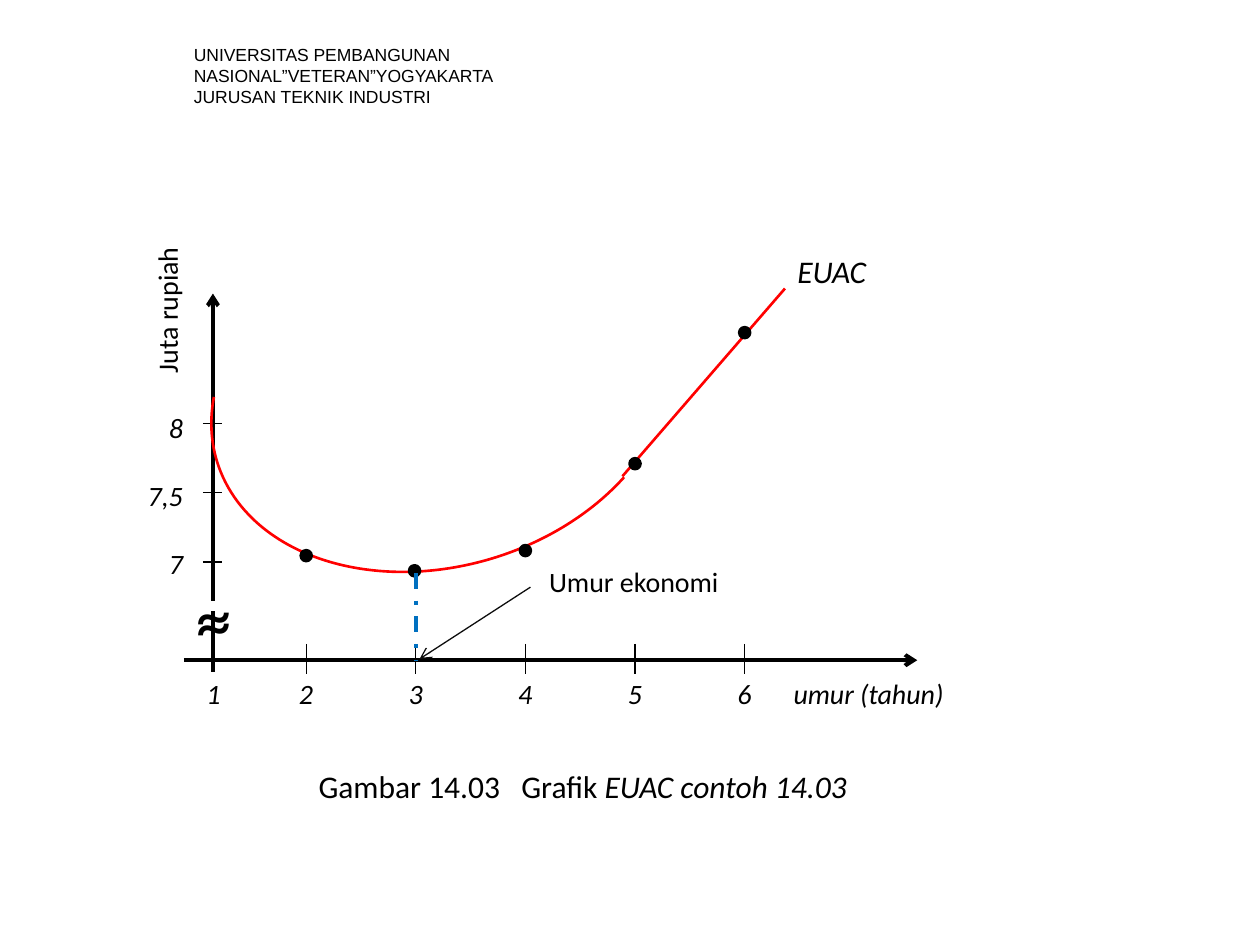
from dataclasses import dataclass

from lxml import etree
from pptx import Presentation
from pptx.dml.color import RGBColor
from pptx.enum.dml import MSO_LINE
from pptx.enum.shapes import MSO_CONNECTOR, MSO_SHAPE
from pptx.enum.text import MSO_AUTO_SIZE, PP_ALIGN
from pptx.oxml.ns import qn
from pptx.util import Inches, Pt

LINE = MSO_CONNECTOR.STRAIGHT
ARC, DOT = MSO_SHAPE.ARC, MSO_SHAPE.FLOWCHART_CONNECTOR
DASH_DOT = MSO_LINE.DASH_DOT
FIT = MSO_AUTO_SIZE.SHAPE_TO_FIT_TEXT
RIGHT = PP_ALIGN.RIGHT
COLS, ROWS = 10, 7.5


@dataclass(frozen=True)
class Theme:
    ink: str = "000000"
    pointer: str = "0D0D0D"
    curve: str = "FF0000"
    marker: str = "0070C0"
    header_font: str = "Arial"
    font: str = "Calibri"
    header: int = 10
    label: int = 16
    caption: int = 18
    symbol: int = 40
    thin: float = 0.75
    medium: float = 1.5
    dot: float = 2
    thick: float = 2.25


class Board:
    """Draws on one slide, in columns and rows of its grid."""

    def __init__(self, prs, theme):
        self.theme = theme
        self.slide = prs.slides.add_slide(prs.slide_layouts[6])
        self.shapes = self.slide.shapes
        self.col, self.row = prs.slide_width / COLS, prs.slide_height / ROWS

    def grid(self, *lengths):
        """Turn alternating column and row lengths into EMU."""
        return [int(v * (self.row if i % 2 else self.col))
                for i, v in enumerate(lengths)]

    def stroke(self, sp, color, width):
        sp.line.color.rgb = RGBColor.from_string(color)
        sp.line.width = Pt(width)

    def line(self, start, end, color, width, arrow=False, dash=None):
        sp = self.shapes.add_connector(LINE, *self.grid(*start, *end))
        self.stroke(sp, color, width)
        if dash:
            sp.line.dash_style = dash
        if arrow:
            etree.SubElement(sp.line._get_or_add_ln(), qn("a:tailEnd"), type="arrow")
        etree.SubElement(sp._element.spPr, qn("a:effectLst"))

    def shape(self, kind, box, color, width, filled=True):
        sp = self.shapes.add_shape(kind, *self.grid(*box))
        sp.shadow.inherit = False
        if filled:
            sp.fill.solid()
            sp.fill.fore_color.rgb = RGBColor.from_string(color)
        else:
            sp.fill.background()
        self.stroke(sp, color, width)
        return sp

    def text(self, box, paragraphs, size, wrap=False, name=None, italic=False,
             align=None, gap=0, tabs=(), vert=None):
        """Each paragraph is a list of (text, italic) runs or a plain string."""
        sp = self.shapes.add_textbox(*self.grid(*box))
        tf = sp.text_frame
        tf.word_wrap, tf.auto_size = wrap, FIT
        if vert:
            tf._txBody.bodyPr.set("vert", vert)
        for i, runs in enumerate(paragraphs):
            p = tf.paragraphs[0] if i == 0 else tf.add_paragraph()
            if align:
                p.alignment = align
            if i and gap:
                p.space_before = Pt(gap)
            if tabs:
                tab_list = etree.SubElement(p._p.get_or_add_pPr(), qn("a:tabLst"))
                for pos, kind in tabs:
                    etree.SubElement(tab_list, qn("a:tab"),
                                     pos=str(int(pos * self.col)), algn=kind)
            for words, slanted in [(runs, italic)] if isinstance(runs, str) else runs:
                r = p.add_run()
                r.text = words
                style = {"name": name or self.theme.font, "size": Pt(size),
                         "italic": slanted}
                for key, value in style.items():
                    setattr(r.font, key, value)
                r.font.color.rgb = RGBColor.from_string(self.theme.ink)


def draw_axes(b):
    t = b.theme
    axis_x, axis_y, inset = 1.69, 5.24, 0.1
    year_x = [2.43 + 0.87 * i for i in range(5)]
    for x in year_x:
        b.line((x, 5.11), (x, 5.35), t.ink, t.thin)
    for i in range(3):
        y = 4.46 - 0.55 * i
        b.line((1.61, y), (1.76, y), t.ink, t.thin)

    b.line((axis_x, 4.77), (axis_x, 2.33), t.ink, t.thick, arrow=True)
    for y in (4.55, 4.46):
        b.text((1.46, y, 0.63, 0.77), ["~"], t.symbol, wrap=True)
    b.line((axis_x, 4.85), (axis_x, 5.33), t.ink, t.thick)
    b.line((1.46, axis_y), (7.28, axis_y), t.ink, t.thick, arrow=True)

    left = 1.54
    tabs = [(x - left - inset, "ctr") for x in year_x] + [(4.66, "l")]
    b.text((left, 5.32, 6.3, 0.37), ["1\t2\t3\t4\t5\t6\tumur (tahun)"], t.label,
           wrap=True, italic=True, tabs=tabs)
    b.text((1.06, 3.21, 0.49, 1.45), ["8", "7,5", "7"], t.label,
           italic=True, align=RIGHT, gap=19.5)
    b.text((1.14, 1.95, 0.47, 1.11), ["Juta rupiah"], t.label, vert="vert270")


def draw_curve(b):
    t = b.theme
    arc = b.shape(ARC, (1.64, 1.74, 3.74, 2.75), t.curve, t.medium, filled=False)
    arc.rotation = 163
    arc.adjustments[0], arc.adjustments[1] = 133.2, 9.53
    b.line((4.94, 3.78), (6.23, 2.29), t.curve, t.medium)
    for x, y in [(2.39, 4.37), (3.25, 4.49), (4.13, 4.33), (5, 3.64), (5.87, 2.6)]:
        b.shape(DOT, (x, y, 0.08, 0.08), t.ink, t.dot)
    b.text((6.23, 1.95, 0.76, 0.4), ["EUAC"], t.caption, italic=True)


def draw_economic_life(b):
    t = b.theme
    b.line((3.3, 4.55), (3.3, 5.24), t.marker, t.thick, dash=DASH_DOT)
    b.line((4.21, 4.66), (3.33, 5.23), t.pointer, t.thin, arrow=True)
    b.text((4.26, 4.43, 1.56, 0.37), ["Umur ekonomi"], t.label)


def main():
    prs = Presentation()
    prs.slide_width, prs.slide_height = Inches(10), Inches(7.5)
    b = Board(prs, Theme())
    t = b.theme
    b.text((1.44, 0.3, 3.59, 0.44),
           ["UNIVERSITAS PEMBANGUNAN NASIONAL”VETERAN”YOGYAKARTA",
            "JURUSAN TEKNIK INDUSTRI"], t.header, wrap=True, name=t.header_font)
    draw_axes(b)
    draw_curve(b)
    draw_economic_life(b)
    b.text((2.43, 6.04, 4.5, 0.4),
           [[("Gambar 14.03\tGrafik ", False), ("EUAC contoh 14.03", True)]],
           t.caption, wrap=True, tabs=[(1.61, "l")])
    prs.save("out.pptx")


if __name__ == "__main__":
    main()
